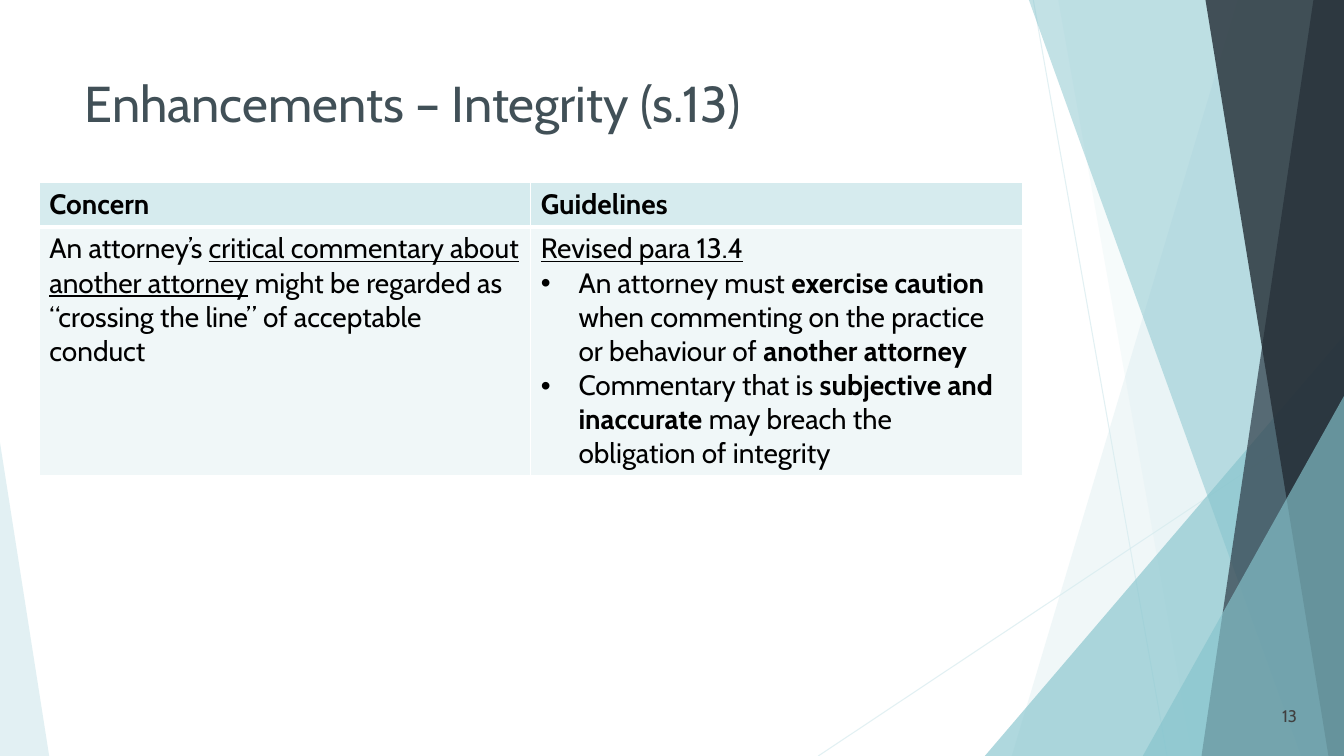
import pptx
import pptx.dml.color
import pptx.enum.shapes
import pptx.enum.text
import pptx.oxml
import pptx.oxml.ns
import pptx.util
from dataclasses import dataclass
from pptx.util import Cm

WIDTH, HEIGHT = 33.87, 19.05
FONT = "Cabin"
PALE, TEAL, SLATE, DARK = "D6EBEE", "86C4CD", "2E3B46", "232C34"
BODY_FILL = "F0F7F8"


@dataclass
class Band:
    """Full-height panel from a slanted left edge to the right slide edge."""
    top_x: float
    bottom_x: float
    color: str
    opacity: int


@dataclass
class Wedge:
    """Right triangle standing on the bottom slide edge."""
    left: float
    top: float
    width: float
    apex: float
    color: str
    opacity: int


@dataclass
class Ray:
    start: tuple[float, float]
    end: tuple[float, float]


@dataclass
class Span:
    text: str
    bold: bool = False
    underline: bool = False


@dataclass
class Para:
    spans: list[Span]
    bullet: bool = False


@dataclass
class Row:
    cells: list[list[Para]]
    color: str | None
    bottom_border: int


DECOR = [
    Ray((26.04, 0), (29.41, HEIGHT)),
    Ray((WIDTH, 10.24), (20.62, HEIGHT)),
    Band(31.19, 25.5, PALE, 36),
    Band(26.67, 30.05, PALE, 20),
    Wedge(24.82, 8.46, 9.05, 1, TEAL, 66),
    Band(25.93, 32.79, TEAL, 50),
    Band(33.1, 30.28, SLATE, 70),
    Band(30.38, 33.48, DARK, 80),
    Wedge(28.8, 9.98, 5.07, 1, TEAL, 66),
    Wedge(0, 11.15, 1.24, 0, PALE, 70),
]

HEADINGS = [[Para([Span(name, bold=True)])] for name in ("Concern", "Guidelines")]
CONCERN = [Para([
    Span("An attorney’s "),
    Span("critical commentary about another attorney", underline=True),
    Span(" might be regarded as “crossing the line” of acceptable conduct"),
])]
GUIDELINES = [
    Para([Span("Revised para 13.4", underline=True)]),
    Para([
        Span("An attorney must "),
        Span("exercise caution", bold=True),
        Span(" when commenting on the practice or behaviour of "),
        Span("another attorney", bold=True),
    ], bullet=True),
    Para([
        Span("Commentary that is "),
        Span("subjective and inaccurate", bold=True),
        Span(" may breach the obligation of integrity"),
    ], bullet=True),
]
ROWS = [
    Row(HEADINGS, PALE, 3),
    Row([CONCERN, GUIDELINES], BODY_FILL, 1),
    Row([[], []], None, 1),
]


def rgb(value: str) -> pptx.dml.color.RGBColor:
    return pptx.dml.color.RGBColor.from_string(value)


def element(tag: str, **attributes):
    node = pptx.oxml.parse_xml(f"<a:{tag} {pptx.oxml.ns.nsdecls('a')}/>")
    for name, value in attributes.items():
        node.set(name, str(value))
    return node


def set_opacity(shape, percent: int) -> None:
    color = shape.element.spPr.find(".//" + pptx.oxml.ns.qn("a:srgbClr"))
    color.append(element("alpha", val=percent * 1000))


def paint(shape, color: str, opacity: int) -> None:
    shape.shadow.inherit = False
    shape.fill.solid()
    shape.fill.fore_color.rgb = rgb(color)
    shape.line.fill.background()
    set_opacity(shape, opacity)


def draw_decor(page, item: Ray | Band | Wedge) -> None:
    if isinstance(item, Ray):
        line = page.shapes.add_connector(
            pptx.enum.shapes.MSO_CONNECTOR.STRAIGHT,
            *map(Cm, item.start + item.end))
        line.line.color.rgb = rgb(PALE)
        line.line.width = pptx.util.Pt(0.75)
        set_opacity(line, 70)
        line.element.spPr.append(element("effectLst"))
    elif isinstance(item, Band):
        outline = page.shapes.build_freeform(Cm(item.top_x), 0)
        outline.add_line_segments([
            (Cm(WIDTH), 0), (Cm(WIDTH), Cm(HEIGHT)), (Cm(item.bottom_x), Cm(HEIGHT))])
        paint(outline.convert_to_shape(), item.color, item.opacity)
    else:
        triangle = page.shapes.add_shape(
            pptx.enum.shapes.MSO_SHAPE.ISOSCELES_TRIANGLE,
            Cm(item.left), Cm(item.top), Cm(item.width), Cm(HEIGHT - item.top))
        triangle.adjustments[0] = item.apex
        paint(triangle, item.color, item.opacity)


def add_text(para, text: str, *, size: float, color: str = "000000",
             bold: bool = False, underline: bool = False) -> None:
    run = para.add_run()
    run.text = text
    run.font.name = FONT
    run.font.size = pptx.util.Pt(size)
    run.font.color.rgb = rgb(color)
    run.font.bold = bold
    run.font.underline = underline


def fill_cell(cell, paras: list[Para]) -> None:
    frame = cell.text_frame
    for index, content in enumerate(paras):
        para = frame.add_paragraph() if index else frame.paragraphs[0]
        if content.bullet:
            properties = para._p.get_or_add_pPr()
            properties.set("marL", str(Cm(0.95)))
            properties.set("indent", str(-Cm(0.95)))
            properties.append(element("buFont", typeface="Arial"))
            properties.append(element("buChar", char="•"))
        for span in content.spans:
            add_text(para, span.text, size=20, bold=span.bold, underline=span.underline)


def style_cell(cell, color: str | None, bottom: int) -> None:
    properties = cell._tc.get_or_add_tcPr()
    for side, points in (("L", 1), ("R", 1), ("T", 1), ("B", bottom)):
        border = element(f"ln{side}", w=pptx.util.Pt(points))
        fill = element("solidFill")
        fill.append(element("srgbClr", val="FFFFFF"))
        border.append(fill)
        properties.append(border)
    if color is None:
        cell.fill.background()
    else:
        cell.fill.solid()
        cell.fill.fore_color.rgb = rgb(color)


def add_comparison(page) -> None:
    holder = page.shapes.add_table(
        len(ROWS), 2, Cm(0.99), Cm(4.6), Cm(24.77), Cm(9.22))
    table = holder.table
    table.horz_banding = False
    for index, row in enumerate(ROWS):
        table.rows[index].height = Cm(1.04)  # rows grow with their text
        for cell, paras in zip(table.rows[index].cells, row.cells):
            style_cell(cell, row.color, row.bottom_border)
            fill_cell(cell, paras)
    holder.height = Cm(9.22)


def main() -> None:
    deck = pptx.Presentation()
    deck.slide_width, deck.slide_height = Cm(WIDTH), Cm(HEIGHT)
    page = deck.slides.add_slide(deck.slide_layouts.get_by_name("Title Only"))

    # Background facets
    for item in DECOR:
        draw_decor(page, item)

    # Title
    title = page.shapes.title
    title.left, title.top, title.width, title.height = map(Cm, (1.88, 1.7, 23.88, 2.51))
    title.text_frame.vertical_anchor = pptx.enum.text.MSO_ANCHOR.TOP
    para = title.text_frame.paragraphs[0]
    para.alignment = pptx.enum.text.PP_ALIGN.LEFT
    add_text(para, "Enhancements – Integrity (s.13)", size=36, color="415057")

    # Concern and guidelines table
    add_comparison(page)

    # Page number
    box = page.shapes.add_textbox(*map(Cm, (31.04, 17.53, 1.9, 1.02)))
    box.text_frame.word_wrap = True
    box.text_frame.vertical_anchor = pptx.enum.text.MSO_ANCHOR.MIDDLE
    para = box.text_frame.paragraphs[0]
    para.alignment = pptx.enum.text.PP_ALIGN.RIGHT
    add_text(para, "13", size=12, color="404040")

    deck.save("out.pptx")


if __name__ == "__main__":
    main()
